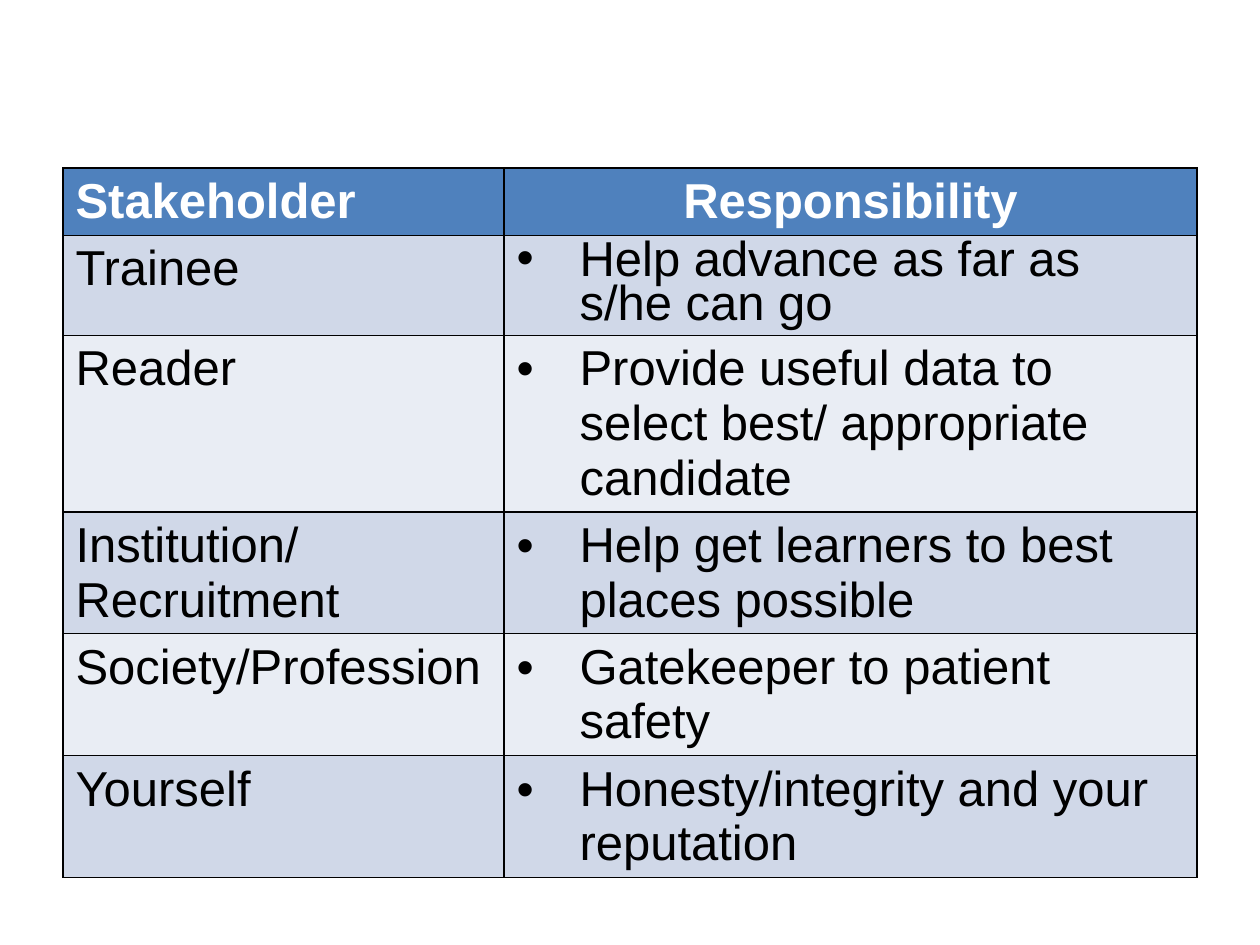
from lxml.etree import SubElement
from pptx import Presentation
from pptx.dml.color import RGBColor
from pptx.enum.text import PP_ALIGN as Align
from pptx.oxml.ns import qn
from pptx.util import Pt

WHITE = RGBColor(0xFF, 0xFF, 0xFF)
BLACK = RGBColor(0x00, 0x00, 0x00)
HEADER_BLUE = RGBColor(0x4F, 0x81, 0xBD)
BANDS = [RGBColor(0xD0, 0xD8, 0xE8), RGBColor(0xE9, 0xED, 0xF4)]

COLUMN_WIDTHS = [Pt(252), Pt(396)]
ROW_HEIGHT = Pt(29.5)
HEADINGS = ["Stakeholder", "Responsibility"]
DUTIES = [
    (["Trainee"], "Help advance as far as s/he can go"),
    (["Reader"], "Provide useful data to select best/ appropriate candidate"),
    (["Institution/", "Recruitment"], "Help get learners to best places possible"),
    (["Society/Profession"], "Gatekeeper to patient safety"),
    (["Yourself"], "Honesty/integrity and your reputation"),
]


def add_borders(cell):
    properties = cell._tc.get_or_add_tcPr()
    for position, side in enumerate(("lnL", "lnR", "lnT", "lnB")):
        line = properties.makeelement(qn(f"a:{side}"), {"w": str(Pt(1))})
        properties.insert(position, line)
        line_fill = SubElement(line, qn("a:solidFill"))
        SubElement(line_fill, qn("a:srgbClr"), val=str(BLACK))


def add_bullet(paragraph):
    properties = paragraph._p.get_or_add_pPr()
    properties.set("marL", str(Pt(36)))
    properties.set("indent", str(-Pt(36)))
    SubElement(properties, qn("a:buFont"), typeface="Arial")
    SubElement(properties, qn("a:buChar"), char="•")


def fill_cell(cell, lines, background, color=BLACK, bold=False):
    """Write one paragraph per line and return the first one."""
    cell.fill.solid()
    cell.fill.fore_color.rgb = background
    add_borders(cell)
    frame = cell.text_frame
    for number, line in enumerate(lines):
        paragraph = frame.add_paragraph() if number else frame.paragraphs[0]
        run = paragraph.add_run()
        run.text = line
        run.font.name = "Arial"
        run.font.size = Pt(28)
        run.font.bold = bold
        run.font.color.rgb = color
    return frame.paragraphs[0]


def add_duties_table(slide):
    table_frame = slide.shapes.add_table(
        len(DUTIES) + 1, len(HEADINGS), Pt(36), Pt(96), sum(COLUMN_WIDTHS), Pt(366))
    table = table_frame.table
    for column, width in zip(table.columns, COLUMN_WIDTHS):
        column.width = width
    for row in table.rows:
        row.height = ROW_HEIGHT
    table_frame.height = Pt(366)

    for column, title in enumerate(HEADINGS):
        heading = fill_cell(table.cell(0, column), [title], HEADER_BLUE, WHITE, True)
    heading.alignment = Align.CENTER

    for row, (stakeholder, duty) in enumerate(DUTIES, start=1):
        band = BANDS[(row - 1) % 2]
        fill_cell(table.cell(row, 0), stakeholder, band)
        responsibility = fill_cell(table.cell(row, 1), [duty], band)
        if row == 1:
            responsibility.line_spacing = 0.8
        add_bullet(responsibility)


def main():
    presentation = Presentation()
    presentation.slide_width = Pt(720)
    presentation.slide_height = Pt(540)
    slide = presentation.slides.add_slide(presentation.slide_layouts[6])
    add_duties_table(slide)
    presentation.save("out.pptx")


if __name__ == "__main__":
    main()
